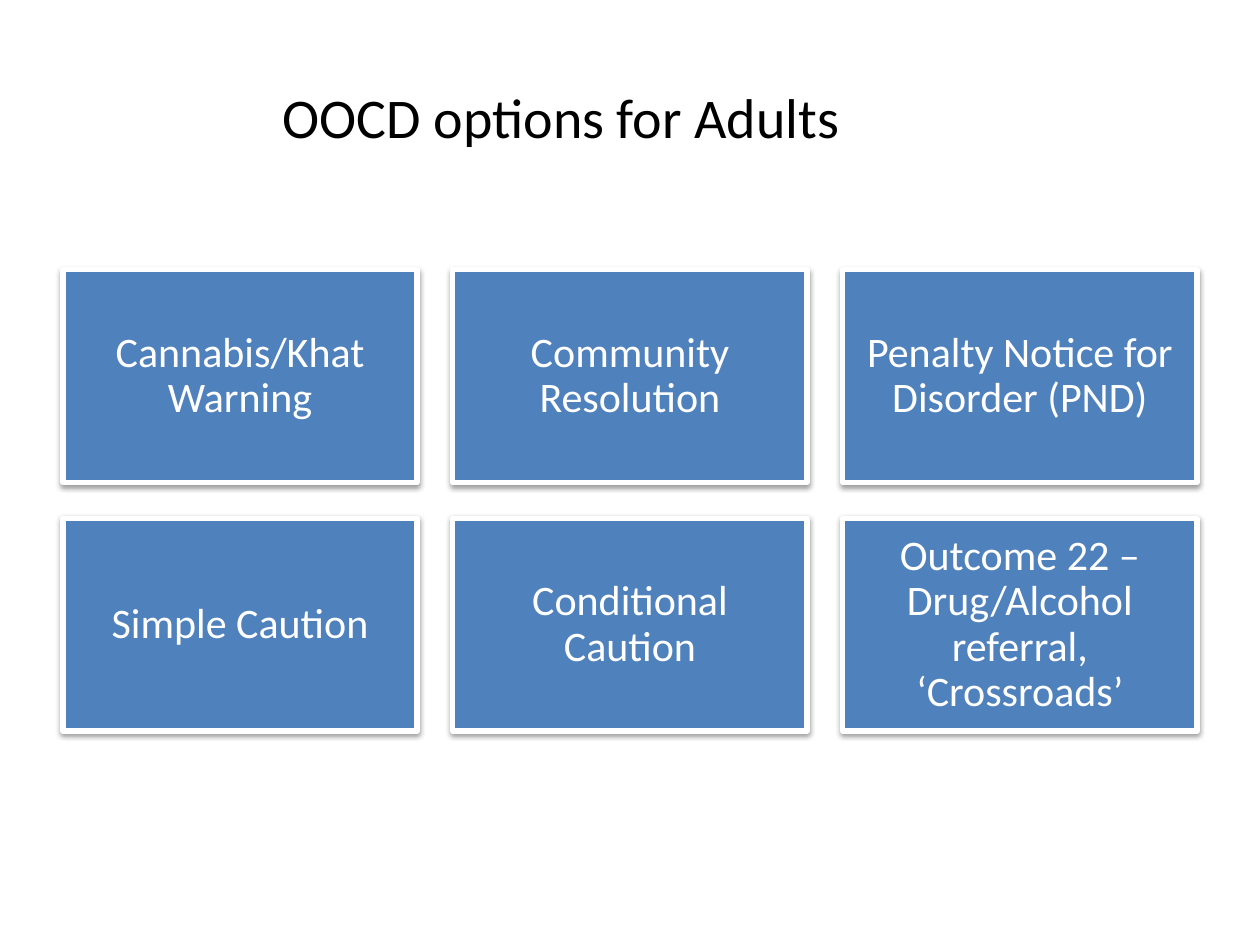
"""Build the slide of out-of-court disposal options for adults."""
from lxml import etree
from pptx import Presentation
from pptx import util as u
from pptx.dml.color import RGBColor
from pptx.enum import shapes, text
from pptx.oxml.ns import qn

TITLE = "OOCD options for Adults"
OPTIONS = [
    ["Cannabis/Khat Warning", "Community Resolution", "Penalty Notice for Disorder (PND)"],
    ["Simple Caution", "Conditional Caution", "Outcome 22 – Drug/Alcohol referral, ‘Crossroads’"],
]
COLORS = {"ink": "000000", "box": "4F81BD", "light": "FFFFFF"}
LEFT, TOP, WIDE, HIGH, GAP = 1.27, 5.44, 7.14, 4.29, 0.72
INSET = u.Cm(0.25)
FRAME = {
    "word_wrap": True,
    "vertical_anchor": text.MSO_ANCHOR.MIDDLE,
    "margin_left": INSET,
    "margin_right": INSET,
    "margin_top": INSET,
    "margin_bottom": INSET,
}
SHADE = {"blurRad": "40000", "dist": "20000", "dir": "5400000", "rotWithShape": "0"}


def color(name):
    return RGBColor.from_string(COLORS[name])


def apply(item, values):
    for key, value in values.items():
        setattr(item, key, value)


def write(shape, words, size, ink, spacing):
    frame = shape.text_frame
    frame.text = words
    apply(frame, FRAME)
    para = frame.paragraphs[0]
    apply(para, {"alignment": text.PP_ALIGN.CENTER, "line_spacing": spacing})
    font = para.runs[0].font
    apply(font, {"name": "Calibri", "size": u.Pt(size)})
    font.color.rgb = color(ink)


def shade(shape):
    shape.shadow.inherit = False
    effects = shape._element.spPr.find(qn("a:effectLst"))
    outer = etree.SubElement(effects, qn("a:outerShdw"), SHADE)
    tint = etree.SubElement(outer, qn("a:srgbClr"), val=COLORS["ink"])
    etree.SubElement(tint, qn("a:alpha"), val="38000")


def add_box(slide, words, col, row):
    left, top = LEFT + col * (WIDE + GAP), TOP + row * (HIGH + GAP)
    place = [u.Cm(n) for n in (left, top, WIDE, HIGH)]
    box = slide.shapes.add_shape(shapes.MSO_SHAPE.RECTANGLE, *place)
    box.fill.solid()
    box.fill.fore_color.rgb = color("box")
    box.line.color.rgb = color("light")
    box.line.width = u.Pt(3)
    shade(box)
    write(box, words, 24, "light", 0.9)


def main():
    deck = Presentation()
    apply(deck, {"slide_width": u.Cm(25.4), "slide_height": u.Cm(19.05)})
    slide = deck.slides.add_slide(deck.slide_layouts[5])
    title = slide.shapes.title
    apply(title, {"left": u.Cm(LEFT), "top": u.Cm(0.76),
                  "width": u.Cm(20.09), "height": u.Cm(3.18)})
    write(title, TITLE, 32, "ink", 1.0)
    for row, line in enumerate(OPTIONS):
        for col, words in enumerate(line):
            add_box(slide, words, col, row)
    deck.save("out.pptx")


if __name__ == "__main__":
    main()
